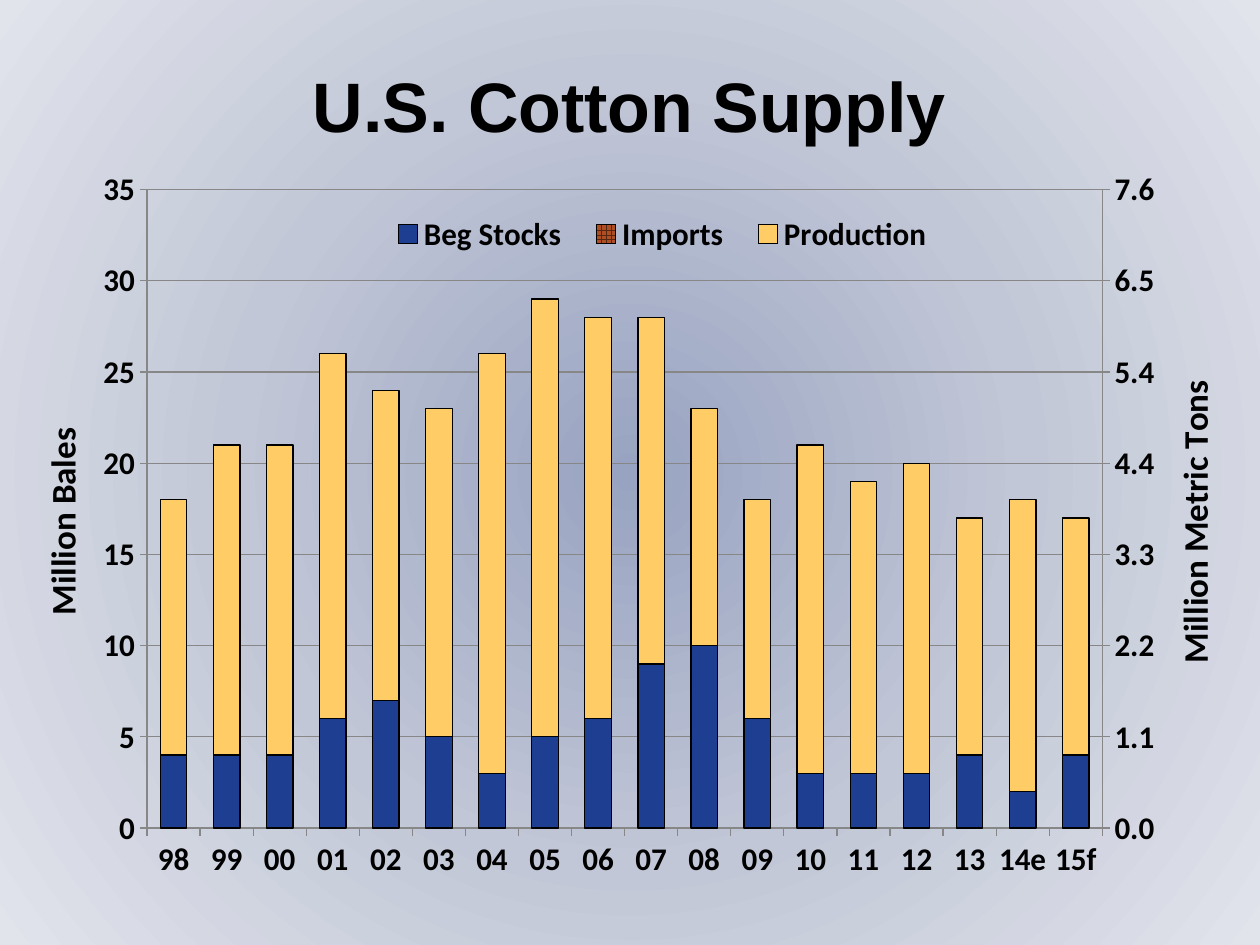
from copy import deepcopy

from pptx import Presentation
from pptx import util as u
from pptx.chart.axis import ValueAxis
from pptx.chart.data import CategoryChartData
from pptx.dml.color import RGBColor
from pptx.enum import chart as ec
from pptx.enum import dml, text
from pptx.oxml import parse_xml
from pptx.oxml.ns import nsdecls, qn

YEARS = "98 99 00 01 02 03 04 05 06 07 08 09 10 11 12 13 14e 15f".split()
BALES = {
    "Beg Stocks": [4, 4, 4, 6, 7, 5, 3, 5, 6, 9, 10, 6, 3, 3, 3, 4, 2, 4],
    "Imports": [0] * len(YEARS),
    "Production": [14, 17, 17, 20, 17, 18, 23, 24, 22, 19, 13, 12, 18, 16, 17, 13, 16, 13],
}
TONS = {
    "Series 4": [0.8, 0.9, 0.9, 1.3, 1.6, 1.2, 0.8, 1.2, 1.3, 2.1, 2.2, 1.4,
                 0.6, 0.6, 0.7, 0.8, 0.5, 0.8],
    "Series 5": [0.1] + [0] * (len(YEARS) - 1),
    "Series 6": [3, 3.7, 3.7, 4.4, 3.7, 4, 5.1, 5.2, 4.7, 4.2, 2.8, 2.7,
                 3.9, 3.4, 3.8, 2.8, 3.6, 2.9],
}
FILLS = ["1E3E92", ("572711", "AE4E22"), "FFCC66"]
BACK = [(0, "98A3C1"), (50, "C2C7D7"), (100, "E1E4EB")]
TOP, STEP, RATIO = 35, 5, 4.59


def hue(code):
    return RGBColor.from_string(code)


def apply(item, form):
    for key, val in form.items():
        setattr(item, key, val)


def node(tag, body="", **attrs):
    vals = "".join(f' {k}="{v}"' for k, v in attrs.items())
    return parse_xml(f"<{tag} {nsdecls('c', 'p', 'a')}{vals}>{body}</{tag}>")


def place(item, spot, index, inner=False):
    for old in item.findall(qn("c:layout")):
        item.remove(old)
    body = '<c:layoutTarget val="inner"/>' if inner else ""
    body += '<c:xMode val="edge"/><c:yMode val="edge"/>'
    body += "".join(f'<c:{k} val="{v}"/>' for k, v in zip("xywh", spot))
    item.insert(index, node("c:layout", f"<c:manualLayout>{body}</c:manualLayout>"))


class Deck:
    ink = "000000"
    grey = "878787"
    head = {"name": "Arial", "size": u.Pt(40), "bold": True}
    label = {"name": "Calibri", "size": u.Pt(18), "bold": True}
    name = {"name": "Calibri", "size": u.Pt(20), "bold": True}

    def __init__(self, wide, high):
        self.prs = Presentation()
        apply(self.prs, {"slide_width": u.Inches(wide), "slide_height": u.Inches(high)})
        self.slide = self.prs.slides.add_slide(self.prs.slide_layouts[6])

    def font(self, item, form):
        apply(item, form)
        item.color.rgb = hue(self.ink)

    def ground(self, stops):
        body = "".join(f'<a:gs pos="{p * 1000}"><a:srgbClr val="{c}"/></a:gs>' for p, c in stops)
        edges = " ".join(f'{side}="50000"' for side in "ltrb")
        body = (f'<p:bgPr><a:gradFill rotWithShape="1"><a:gsLst>{body}</a:gsLst>'
                f'<a:path path="circle"><a:fillToRect {edges}/></a:path></a:gradFill>'
                '<a:effectLst/></p:bgPr>')
        self.slide.element.cSld.insert(0, node("p:bg", body))

    def title(self, words, *box):
        frame = self.slide.shapes.add_textbox(*map(u.Inches, box)).text_frame
        apply(frame, {"word_wrap": True, "vertical_anchor": text.MSO_ANCHOR.MIDDLE})
        para = frame.paragraphs[0]
        para.alignment = text.PP_ALIGN.CENTER
        run = para.add_run()
        run.text = words
        self.font(run.font, self.head)

    def line(self, item, code):
        item.color.rgb = hue(code)
        item.width = u.Pt(0.75)

    def scale(self, axis, words, top, step, code, spot):
        apply(axis, {"minimum_scale": 0, "maximum_scale": top, "major_unit": step,
                     "major_tick_mark": ec.XL_TICK_MARK.OUTSIDE})
        apply(axis.tick_labels, {"number_format": code, "number_format_is_linked": False})
        self.line(axis.format.line, self.grey)
        frame = axis.axis_title.text_frame
        frame.text = words
        self.font(frame.paragraphs[0].runs[0].font, self.name)
        frame._txBody.bodyPr.set("rot", "-5400000")
        frame._txBody.bodyPr.set("vert", "horz")
        place(axis.axis_title._element, spot, 1)

    def paint(self, bar, tone):
        fill = bar.format.fill
        if isinstance(tone, tuple):
            fill.patterned()
            fill.pattern = dml.MSO_PATTERN.LARGE_GRID
            fill.fore_color.rgb, fill.back_color.rgb = map(hue, tone)
        else:
            fill.solid()
            fill.fore_color.rgb = hue(tone)
        self.line(bar.format.line, self.ink)

    def second(self, area, count):
        left = area.find(qn("c:barChart"))
        right = deepcopy(left)
        for item, gone in ((left, slice(count, None)), (right, slice(count))):
            for ser in item.findall(qn("c:ser"))[gone]:
                item.remove(ser)
        left.addnext(right)
        cat, val = (deepcopy(area.find(qn(tag))) for tag in ("c:catAx", "c:valAx"))
        ids = {cat.find(qn("c:axId")).get("val"): "5001",
               val.find(qn("c:axId")).get("val"): "5002"}
        for item in (right, cat, val):
            for tag in ("c:axId", "c:crossAx"):
                for ref in item.findall(qn(tag)):
                    ref.set("val", ids[ref.get("val")])
        area.find(qn("c:valAx")).addnext(val)
        val.addnext(cat)
        cat.find(qn("c:delete")).set("val", "1")
        val.find(qn("c:axPos")).set("val", "r")
        val.find(qn("c:crosses")).set("val", "max")
        axis = ValueAxis(val)
        axis.has_major_gridlines = False
        return axis

    def chart(self, *box):
        data = CategoryChartData()
        data.categories = YEARS
        for name, vals in {**BALES, **TONS}.items():
            data.add_series(name, vals)
        kind = ec.XL_CHART_TYPE.COLUMN_STACKED
        chart = self.slide.shapes.add_chart(kind, *map(u.Inches, box), data).chart
        apply(chart, {"has_title": False, "has_legend": True})
        self.font(chart.font, self.label)
        plot = chart.plots[0]
        apply(plot, {"gap_width": 100, "overlap": 100, "vary_by_categories": False})
        bars = list(plot.series)
        for bar, tone in zip(bars, FILLS):
            self.paint(bar, tone)
        for bar in bars[len(BALES):]:
            bar.format.fill.background()
            bar.format.line.fill.background()

        cat, val = chart.category_axis, chart.value_axis
        apply(cat, {"tick_label_position": ec.XL_TICK_LABEL_POSITION.LOW,
                    "major_tick_mark": ec.XL_TICK_MARK.OUTSIDE})
        self.line(cat.format.line, self.grey)
        val.has_major_gridlines = True
        self.line(val.major_gridlines.format.line, self.grey)
        area = chart._chartSpace.chart.plotArea
        right = self.second(area, len(BALES))
        self.scale(val, "Million Bales", TOP, STEP, "0", (0, 0.36))
        self.scale(right, "Million Metric Tons", TOP / RATIO, STEP / RATIO,
                   "#,##0.0", (0.96, 0.295))
        place(area, (0.098, 0.056, 0.81, 0.846), 0, True)
        self.legend(chart.legend, range(len(BALES), len(bars)))

    def legend(self, key, hidden):
        apply(key, {"position": ec.XL_LEGEND_POSITION.TOP, "include_in_layout": False})
        self.font(key.font, self.label)
        place(key._element, (0.29, 0.09, 0.49, 0.05), 1)
        for spot, num in enumerate(hidden, 1):
            body = f'<c:idx val="{num}"/><c:delete val="1"/>'
            key._element.insert(spot, node("c:legendEntry", body))


def main():
    deck = Deck(10, 7.5)
    deck.ground(BACK)
    deck.title("U.S. Cotton Supply", 0.25, 0.33, 9.49, 1)
    deck.chart(0.25, 1.17, 9.49, 5.99)
    deck.prs.save("out.pptx")


if __name__ == "__main__":
    main()
